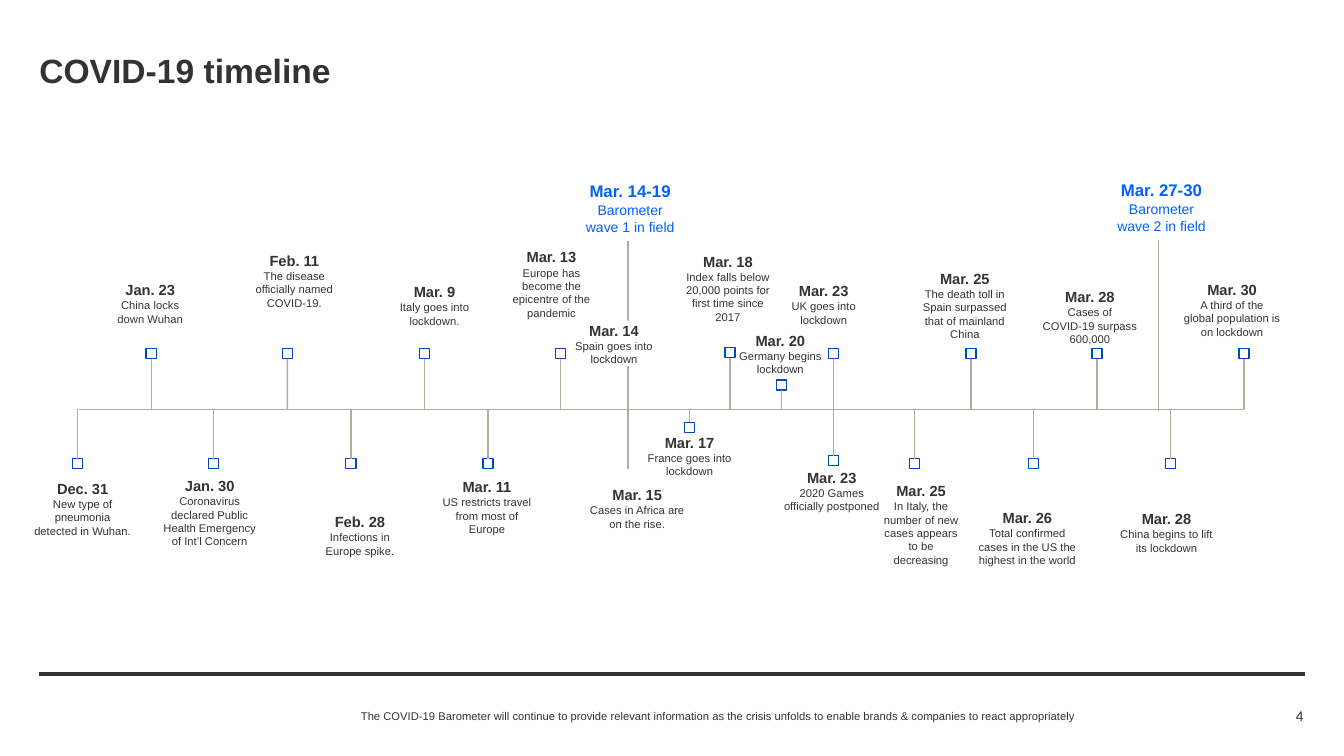
"""Build the COVID-19 timeline slide."""
from dataclasses import dataclass

from lxml.etree import SubElement
from pptx import Presentation
from pptx.dml.color import RGBColor
from pptx.enum.shapes import MSO_CONNECTOR, MSO_SHAPE
from pptx.enum.text import MSO_ANCHOR, MSO_AUTO_SIZE, PP_ALIGN
from pptx.oxml.ns import qn
from pptx.util import Inches, Pt


@dataclass
class Theme:
    font: str = "Arial"
    ink: str = "333333"
    wave: str = "0060FF"
    marker: str = "0048BF"
    stem: str = "AEAE9F"
    paper: str = "FFFFFF"
    title: float = 24
    wave_date: float = 12
    wave_body: float = 10
    date: float = 10.5
    body: float = 8
    number: float = 10


@dataclass
class Event:
    date: str
    story: str
    left: float
    top: float
    height: float
    marker: tuple = None
    width: float = 0.98
    backed: bool = False
    wave: bool = False


theme = Theme()
AXIS_Y = 4.06
MARKER_SIZE = 0.1
UPPER, LOWER = 3.46, 4.55

events = [
    Event("Dec. 31", "New type of pneumonia detected in Wuhan.", 0.33, 4.76, 0.73, (0.72, LOWER)),
    Event("Jan. 23", "China locks\ndown Wuhan", 1, 2.78, 0.45, (1.45, UPPER)),
    Event("Jan. 30", "Coronavirus declared Public Health Emergency of Int’l Concern",
          1.59, 4.73, 0.72, (2.07, LOWER)),
    Event("Feb. 11", "The disease officially named COVID-19.", 2.43, 2.49, 0.58, (2.8, UPPER)),
    Event("Feb. 28", "Infections in Europe spike.", 3.08, 5.09, 0.45, (3.43, LOWER)),
    Event("Mar. 9", "Italy goes into lockdown.", 3.82, 2.8, 0.45, (4.16, UPPER)),
    Event("Mar. 11", "US restricts travel from most of Europe", 4.34, 4.74, 0.58, (4.79, LOWER)),
    Event("Mar. 13", "Europe has become the epicentre of the pandemic",
          4.98, 2.45, 0.72, (5.51, UPPER)),
    Event("Mar. 14-19", "Barometer wave 1 in field", 5.76, 1.79, 0.54, wave=True),
    Event("Mar. 14", "Spain goes into lockdown", 5.6, 3.18, 0.45, backed=True),
    Event("Mar. 15", "Cases in Africa are on the rise.", 5.83, 4.82, 0.45),
    Event("Mar. 17", "France goes into lockdown", 6.35, 4.3, 0.45, (6.79, 4.19), backed=True),
    Event("Mar. 18", "Index falls below 20,000 points for first time since 2017",
          6.73, 2.49, 0.72, (7.19, 3.45)),
    Event("Mar. 20", "Germany begins lockdown", 7.25, 3.28, 0.45, (7.7, 3.77)),
    Event("Mar. 23", "UK goes into lockdown", 7.68, 2.79, 0.45, (8.22, UPPER)),
    Event("Mar. 23", "2020 Games officially postponed", 7.76, 4.65, 0.45, (8.22, 4.52)),
    Event("Mar. 25", "In Italy, the number of new cases appears to be decreasing",
          8.74, 4.78, 0.85, (9.02, LOWER), width=0.79),
    Event("Mar. 25", "The death toll in Spain surpassed that of mainland China",
          9.08, 2.65, 0.73, (9.58, UPPER)),
    Event("Mar. 26", "Total confirmed cases in the US the highest in the world",
          9.7, 5.05, 0.6, (10.2, LOWER)),
    Event("Mar. 28", "Cases of COVID-19 surpass 600,000", 10.32, 2.83, 0.6, (10.83, UPPER)),
    Event("Mar. 27-30", "Barometer wave 2 in field", 11.03, 1.78, 0.54, wave=True),
    Event("Mar. 28", "China begins to lift its lockdown", 11.08, 5.06, 0.45, (11.56, LOWER)),
    Event("Mar. 30", "A third of the\nglobal population is on lockdown",
          11.73, 2.76, 0.6, (12.29, UPPER)),
]

deck = Presentation()
deck.slide_width, deck.slide_height = Inches(13.33), Inches(7.5)
page = deck.slides.add_slide(deck.slide_layouts[5])


def draw_line(x1, y1, x2, y2, color=theme.stem, width=1):
    line = page.shapes.add_connector(
        MSO_CONNECTOR.STRAIGHT, Inches(x1), Inches(y1), Inches(x2), Inches(y2))
    line.line.color.rgb = RGBColor.from_string(color)
    line.line.width = Pt(width)
    SubElement(line._element.spPr, qn("a:effectLst"))
    return line


def write_text(box, anchor, align, color, paragraphs):
    frame = box.text_frame
    frame.word_wrap = True
    frame.auto_size = MSO_AUTO_SIZE.NONE
    frame.vertical_anchor = anchor
    frame.margin_left = frame.margin_top = frame.margin_right = frame.margin_bottom = 0
    for index, (text, size, bold) in enumerate(paragraphs):
        para = frame.add_paragraph() if index else frame.paragraphs[0]
        para.alignment = align
        for row, words in enumerate(text.split("\n")):
            if row:
                para.add_line_break()
            span = para.add_run()
            span.text = words
            span.font.name = theme.font
            span.font.size = Pt(size)
            span.font.bold = bold
            span.font.color.rgb = RGBColor.from_string(color)


title = page.shapes.title
title.left, title.top = Inches(0.39), Inches(0.47)
title.width, title.height = Inches(12.54), Inches(0.44)
write_text(title, MSO_ANCHOR.MIDDLE, PP_ALIGN.LEFT, theme.ink,
           [("COVID-19 timeline", theme.title, True)])

draw_line(0.39, 6.69, 12.94, 6.69, theme.ink, 3)
draw_line(0.78, AXIS_Y, 12.34, AXIS_Y)
for x, start, end in [(6.23, 2.39, 4.1), (11.49, 2.38, 4.08), (6.23, 4.65, AXIS_Y)]:
    draw_line(x, start, x, end)

for event in events:
    label = page.shapes.add_textbox(
        Inches(event.left), Inches(event.top), Inches(event.width), Inches(event.height))
    if event.backed:
        label.fill.solid()
        label.fill.fore_color.rgb = RGBColor.from_string(theme.paper)
    anchor = MSO_ANCHOR.BOTTOM if event.top < AXIS_Y else MSO_ANCHOR.TOP
    color = theme.wave if event.wave else theme.ink
    date_size = theme.wave_date if event.wave else theme.date
    body_size = theme.wave_body if event.wave else theme.body
    write_text(label, anchor, PP_ALIGN.CENTER, color,
               [(event.date, date_size, True), (event.story, body_size, False)])

for event in events:
    if event.marker is None:
        continue
    left, top = event.marker
    marker = page.shapes.add_shape(
        MSO_SHAPE.RECTANGLE, Inches(left), Inches(top), Inches(MARKER_SIZE), Inches(MARKER_SIZE))
    marker.shadow.inherit = False
    marker.fill.solid()
    marker.fill.fore_color.rgb = RGBColor.from_string(theme.paper)
    marker.line.color.rgb = RGBColor.from_string(theme.marker)
    marker.line.width = Pt(1)
    center = left + MARKER_SIZE / 2
    stem = draw_line(center, top, center, AXIS_Y)
    stem.begin_connect(marker, 2 if top < AXIS_Y else 0)

footers = [
    (3.58, 8.2, PP_ALIGN.LEFT, theme.body,
     "The COVID-19 Barometer will continue to provide relevant information as the crisis "
     "unfolds to enable brands & companies to react appropriately"),
    (11.87, 1.06, PP_ALIGN.RIGHT, theme.number, "4"),
]
for left, width, align, size, text in footers:
    footer = page.shapes.add_textbox(Inches(left), Inches(6.99), Inches(width), Inches(0.22))
    write_text(footer, MSO_ANCHOR.MIDDLE, align, theme.ink, [(text, size, False)])

deck.save("out.pptx")
